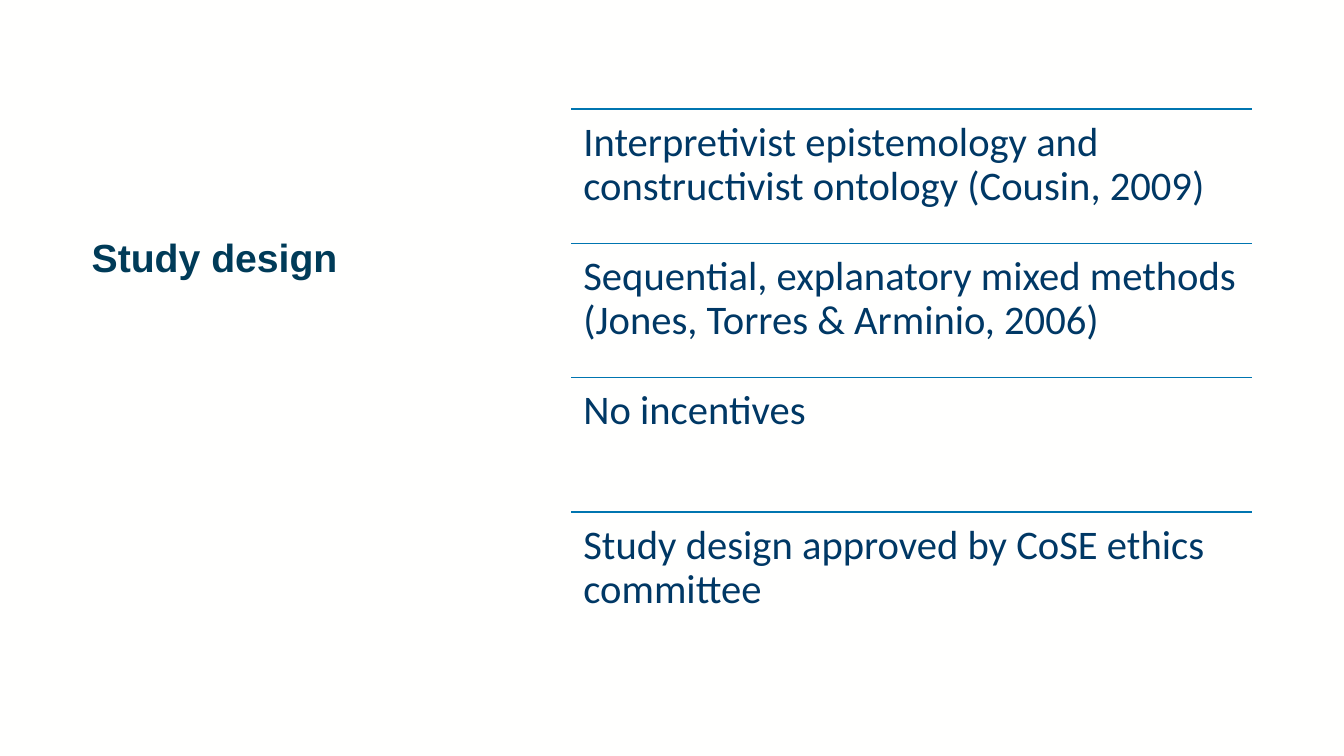
"""Build the study design slide: a title beside four ruled statements."""
from lxml import etree
from pptx import Presentation
from pptx.dml.color import RGBColor
from pptx.enum import text
from pptx.oxml import ns
from pptx.util import Pt

COLORS = {"back": "FFFFFE", "title": "003B58", "body": "003865", "rule": "0075B0"}
LEFT, TOP, WIDTH, STEP = 408, 77.8, 486, 96
INSET = 8.7
POINTS = [
    "Interpretivist epistemology and constructivist ontology (Cousin, 2009)",
    "Sequential, explanatory mixed methods (Jones, Torres & Arminio, 2006)",
    "No incentives",
    "Study design approved by CoSE ethics committee",
]


def color(name):
    """Return the named colour."""
    return RGBColor.from_string(COLORS[name])


def write(frame, words, face, size, tint, bold=False):
    """Put one run of text at the top left of a frame."""
    frame.word_wrap = True
    frame.auto_size = text.MSO_AUTO_SIZE.NONE
    frame.vertical_anchor = text.MSO_ANCHOR.TOP
    para = frame.paragraphs[0]
    para.alignment = text.PP_ALIGN.LEFT
    para.line_spacing = 0.9
    run = para.add_run()
    run.text = words
    run.font.name = face
    run.font.size = Pt(size)
    run.font.bold = bold
    run.font.color.rgb = color(tint)


deck = Presentation()
deck.slide_width, deck.slide_height = Pt(960), Pt(540)
slide = deck.slides.add_slide(deck.slide_layouts[5])
slide.background.fill.solid()
slide.background.fill.fore_color.rgb = color("back")

title = slide.shapes.title
title.left, title.top, title.width, title.height = Pt(58.3), Pt(167), Pt(316.8), Pt(126)
write(title.text_frame, "Study design", "Arial", 28, "title", True)

for row, words in enumerate(POINTS):
    y = Pt(TOP + row * STEP)
    rule = slide.shapes.add_connector(1, Pt(LEFT), y, Pt(LEFT + WIDTH), y)
    rule.line.color.rgb = color("rule")
    rule.line.width = Pt(1)
    etree.SubElement(rule._element.spPr, ns.qn("a:effectLst"))

    box = slide.shapes.add_textbox(Pt(LEFT), y, Pt(WIDTH), Pt(STEP))
    frame = box.text_frame
    frame.margin_left = frame.margin_right = Pt(INSET)
    frame.margin_top = frame.margin_bottom = Pt(INSET)
    write(frame, words, "Calibri", 29, "body")

deck.save("out.pptx")
